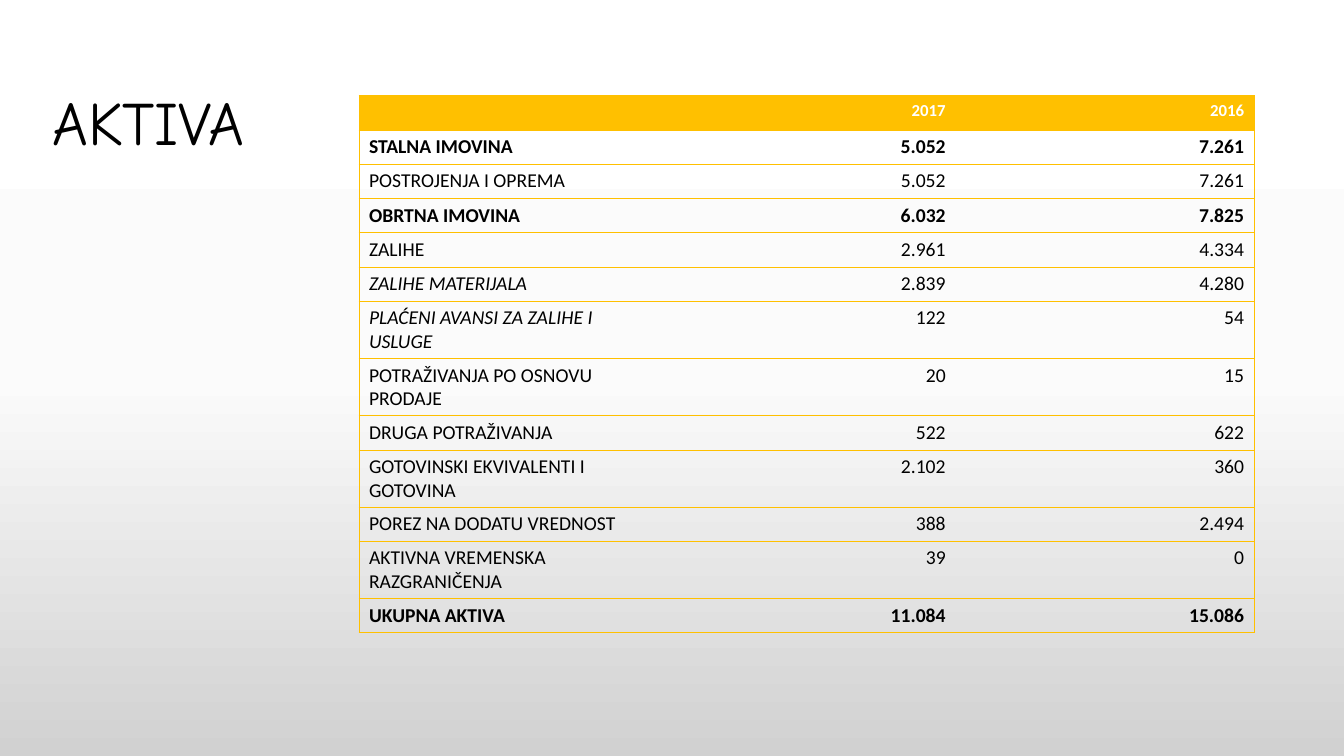
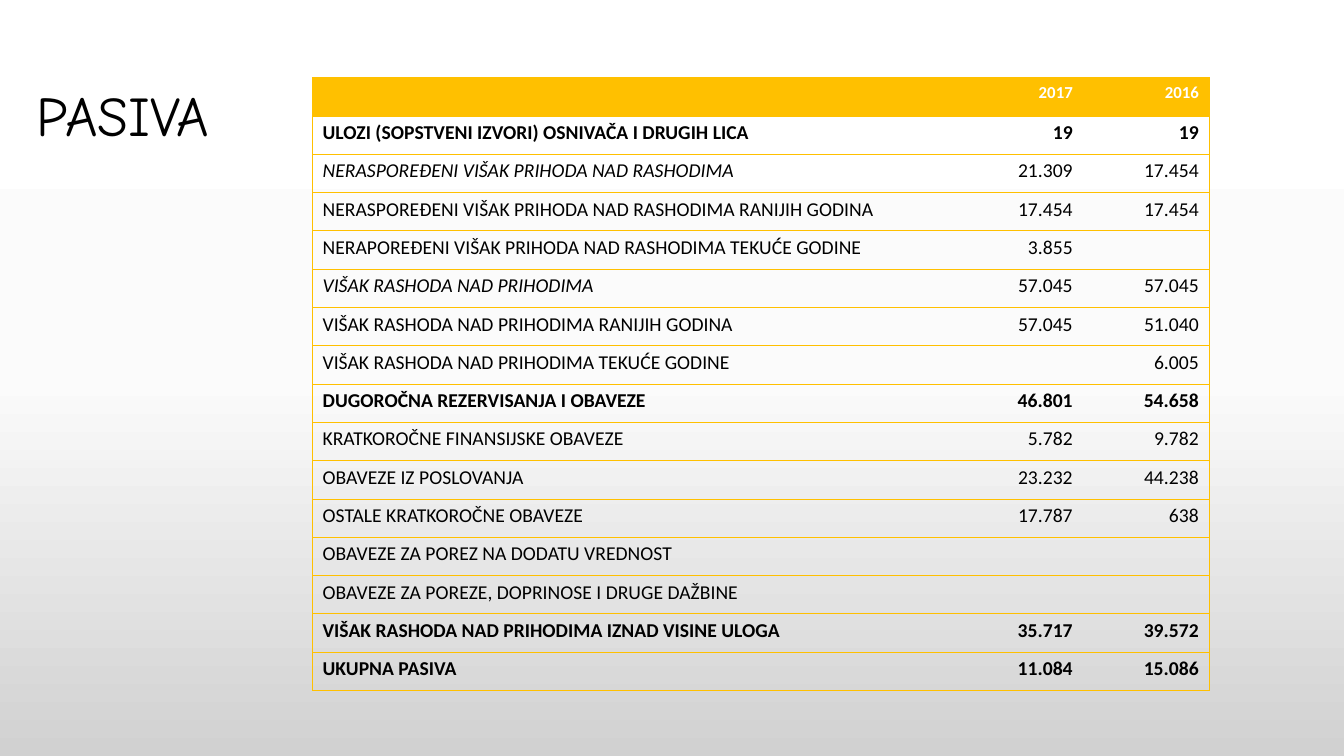
from copy import deepcopy

from lxml.etree import SubElement
from pptx import Presentation
from pptx.dml.color import RGBColor
from pptx.enum.text import MSO_ANCHOR, PP_ALIGN
from pptx.oxml.ns import qn
from pptx.util import Inches, Pt

COLORS = {"gold": "FFC000", "text": "000000", "header": "FFFFFF"}
BACKDROP = [(0, "FFFFFF"), (0.5, "FBFBFB"), (1, "D1D1D1")]
TITLE_FONT, BODY_FONT = "Comic Neue", "Calibri"
HEADER = ("", "2017", "2016")

# Each row: label, 2017, 2016, and "b" for a bold row or "i" for an italic label
AKTIVA = [
    ("STALNA IMOVINA", "5.052", "7.261", "b"),
    ("POSTROJENJA I OPREMA", "5.052", "7.261", ""),
    ("OBRTNA IMOVINA", "6.032", "7.825", "b"),
    ("ZALIHE", "2.961", "4.334", ""),
    ("ZALIHE MATERIJALA", "2.839", "4.280", "i"),
    ("PLAĆENI AVANSI ZA ZALIHE I USLUGE", "122", "54", "i"),
    ("POTRAŽIVANJA PO OSNOVU PRODAJE", "20", "15", ""),
    ("DRUGA POTRAŽIVANJA", "522", "622", ""),
    ("GOTOVINSKI EKVIVALENTI I GOTOVINA", "2.102", "360", ""),
    ("POREZ NA DODATU VREDNOST", "388", "2.494", ""),
    ("AKTIVNA VREMENSKA RAZGRANIČENJA", "39", "0", ""),
    ("UKUPNA AKTIVA", "11.084", "15.086", "b"),
]
PASIVA = [
    ("ULOZI (SOPSTVENI IZVORI) OSNIVAČA I DRUGIH LICA", "19", "19", "b"),
    ("NERASPOREĐENI VIŠAK PRIHODA NAD RASHODIMA", "21.309", "17.454", "i"),
    ("NERASPOREĐENI VIŠAK PRIHODA NAD RASHODIMA RANIJIH GODINA",
     "17.454", "17.454", ""),
    ("NERAPOREĐENI VIŠAK PRIHODA NAD RASHODIMA TEKUĆE GODINE",
     "3.855", "", ""),
    ("VIŠAK RASHODA NAD PRIHODIMA", "57.045", "57.045", "i"),
    ("VIŠAK RASHODA NAD PRIHODIMA RANIJIH GODINA", "57.045", "51.040", ""),
    ("VIŠAK RASHODA NAD PRIHODIMA TEKUĆE GODINE", "", "6.005", ""),
    ("DUGOROČNA REZERVISANJA I OBAVEZE", "46.801", "54.658", "b"),
    ("KRATKOROČNE FINANSIJSKE OBAVEZE", "5.782", "9.782", ""),
    ("OBAVEZE IZ POSLOVANJA", "23.232", "44.238", ""),
    ("OSTALE KRATKOROČNE OBAVEZE", "17.787", "638", ""),
    ("OBAVEZE ZA POREZ NA DODATU VREDNOST", "", "", ""),
    ("OBAVEZE ZA POREZE, DOPRINOSE I DRUGE DAŽBINE", "", "", ""),
    ("VIŠAK RASHODA NAD PRIHODIMA IZNAD VISINE ULOGA",
     "35.717", "39.572", "b"),
    ("UKUPNA PASIVA", "11.084", "15.086", "b"),
]


class Deck:
    """Holds the presentation, its style and the current slide."""

    def __init__(self):
        self.prs = Presentation()
        self.prs.slide_width, self.prs.slide_height = Inches(13.33), Inches(7.5)
        self.backdrop()

    def backdrop(self):
        master = self.prs.slide_master
        fill = master.background.fill
        fill.gradient()
        fill.gradient_angle = 270
        stop_list = master.element.find(".//" + qn("a:gsLst"))
        stop_list.append(deepcopy(stop_list[0]))
        for stop, (position, color) in zip(fill.gradient_stops, BACKDROP):
            stop.position = position
            stop.color.rgb = RGBColor.from_string(color)

    def slide(self):
        self.s = self.prs.slides.add_slide(self.prs.slide_layouts[6])

    def font(self, run, name, size, color, bold=False, italic=False):
        f = run.font
        f.name, f.size, f.bold, f.italic = name, Pt(size), bold, italic
        f.color.rgb = RGBColor.from_string(COLORS[color])

    def title(self, text, left, top, size):
        tf = self.s.shapes.add_textbox(Inches(left), Inches(top),
                                       Inches(11.5), Inches(1.45)).text_frame
        tf.word_wrap = True
        tf.vertical_anchor = MSO_ANCHOR.MIDDLE
        p = tf.paragraphs[0]
        p.text = text
        p.line_spacing = 0.9
        self.font(p.runs[0], TITLE_FONT, size, "text")

    def borders(self, cell, sides):
        """Draw gold lines on the given sides (of L, R, T, B) and clear the rest."""
        tc_pr = cell._tc.get_or_add_tcPr()
        for i, side in enumerate("LRTB"):
            ln = SubElement(tc_pr, qn("a:ln" + side), w=str(Pt(0.5)))
            if side in sides:
                fill = SubElement(ln, qn("a:solidFill"))
                SubElement(fill, qn("a:srgbClr"), val=COLORS["gold"])
            else:
                SubElement(ln, qn("a:noFill"))
            tc_pr.insert(i, ln)

    def cell(self, cell, text, size, color, align, bold, italic):
        p = cell.text_frame.paragraphs[0]
        p.text = text
        p.alignment = align
        for r in p.runs:
            self.font(r, BODY_FONT, size, color, bold, italic)
        if not text:
            SubElement(p._p, qn("a:endParaRPr"), sz=str(size * 100))

    def table(self, rows, left, top, widths, row_height):
        table = self.s.shapes.add_table(
            len(rows) + 1, len(widths), Inches(left), Inches(top),
            Inches(sum(widths)), Inches(row_height * (len(rows) + 1))).table
        table.horz_banding = False
        for column, width in zip(table.columns, widths):
            column.width = Inches(width)
        last = len(widths) - 1
        for i, (*texts, style) in enumerate([(*HEADER, "b"), *rows]):
            size, color = (14, "text") if i else (12, "header")
            for j, text in enumerate(texts):
                cell = table.cell(i, j)
                self.cell(cell, text, size, color,
                          PP_ALIGN.RIGHT if j else PP_ALIGN.LEFT,
                          style == "b", style == "i" and j == 0)
                if i:
                    cell.fill.background()
                else:
                    cell.fill.solid()
                    cell.fill.fore_color.rgb = RGBColor.from_string(COLORS["gold"])
                self.borders(cell, "TB" + "L" * (j == 0) + "R" * (j == last))


def main():
    deck = Deck()

    deck.slide()
    deck.title("AKTIVA", 0.42, 0.52, 44)
    deck.table(AKTIVA, 3.56, 0.95, [2.96] * 3, 0.34)

    deck.slide()
    deck.title("PASIVA", 0.26, 0.45, 40)
    deck.table(PASIVA, 3.1, 0.77, [6.26, 1.38, 1.25], 0.38)

    deck.prs.save("out.pptx")


if __name__ == "__main__":
    main()
